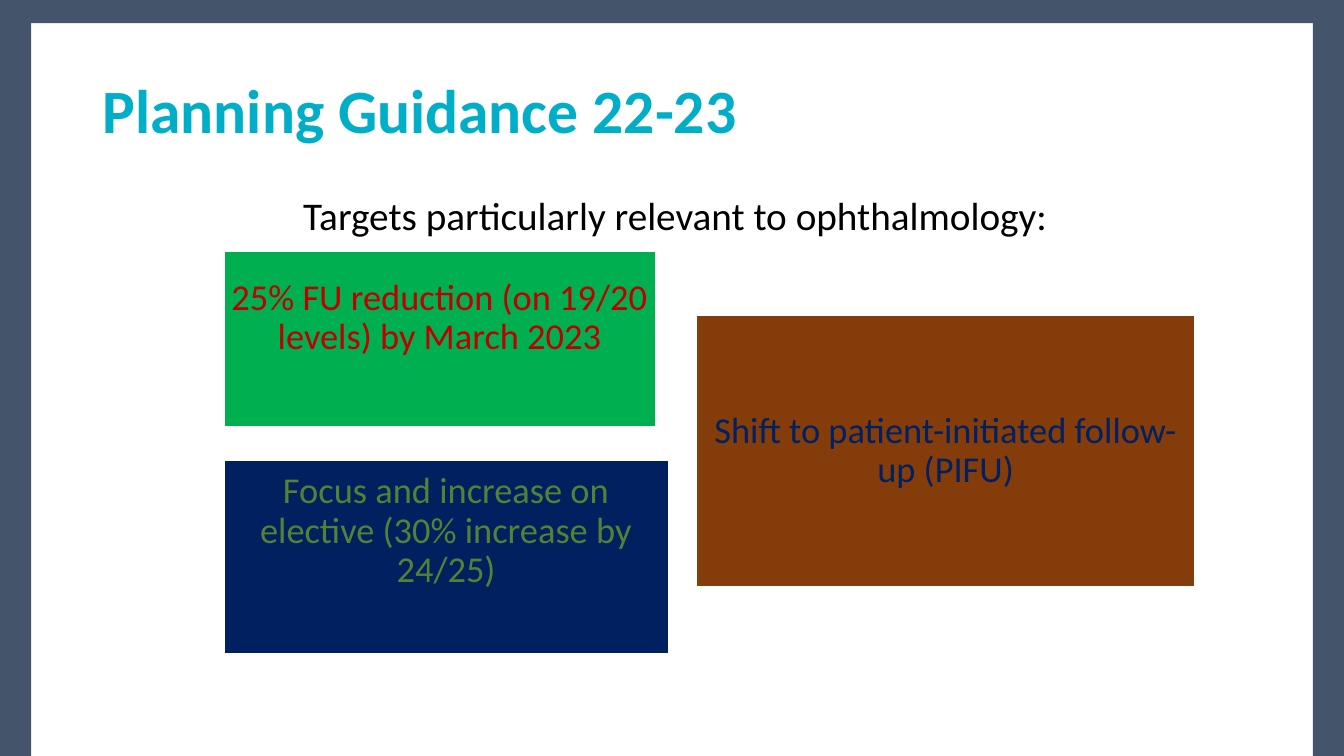
from dataclasses import dataclass

from pptx import Presentation
from pptx.dml.color import RGBColor
from pptx.enum.shapes import MSO_SHAPE
from pptx.enum.text import MSO_ANCHOR, PP_ALIGN
from pptx.util import Inches, Pt

RECT = MSO_SHAPE.RECTANGLE
TOP, MIDDLE = MSO_ANCHOR.TOP, MSO_ANCHOR.MIDDLE
LEFT, CENTER = PP_ALIGN.LEFT, PP_ALIGN.CENTER

FONT = "Calibri"
SLATE = "44546A"
WHITE = "FFFFFF"
SLIDE_W, SLIDE_H = 13.33, 7.5
SIDE_W, TOP_H = 0.31, 0.23
PAD = 0.07


@dataclass
class Box:
    left: float
    top: float
    width: float
    height: float


@dataclass
class Target:
    box: Box
    fill: str
    color: str
    text: str
    bottom: float = PAD


FRAME = [
    Box(0, 0, SIDE_W, SLIDE_H),
    Box(SLIDE_W - SIDE_W, 0, SIDE_W, SLIDE_H),
    Box(0, 0, SLIDE_W, TOP_H),
]

TARGETS = [
    Target(Box(2.22, 2.49, 4.28, 1.74), "00B050", "C00000",
           "25% FU reduction (on 19/20 levels) by March 2023", 0.47),
    Target(Box(6.91, 3.13, 4.94, 2.69), "843C0B", "002060",
           "Shift to patient-initiated follow-up (PIFU)"),
    Target(Box(2.22, 4.57, 4.41, 1.92), "002060", "548235",
           "Focus and increase on elective (30% increase by 24/25)", 0.59),
]


def rgb(value: str) -> RGBColor:
    return RGBColor.from_string(value)


def place(box: Box) -> list:
    return [Inches(v) for v in (box.left, box.top, box.width, box.height)]


def add_rect(slide, box: Box, fill: str):
    sp = slide.shapes.add_shape(RECT, *place(box))
    sp.shadow.inherit = False
    sp.fill.solid()
    sp.fill.fore_color.rgb = rgb(fill)
    sp.line.fill.background()
    return sp


def write(sp, text: str, color: str, frame: dict, para: dict, font: dict) -> None:
    tf = sp.text_frame
    p = tf.paragraphs[0]
    r = p.add_run()
    r.text = text
    r.font.color.rgb = rgb(color)
    formats = (
        (tf, {"word_wrap": True, **frame}),
        (p, para),
        (r.font, {"name": FONT, **font}),
    )
    for target, values in formats:
        for name, value in values.items():
            setattr(target, name, value)


def add_text(slide, box: Box, text: str, color: str,
             frame: dict, para: dict, font: dict) -> None:
    sp = slide.shapes.add_textbox(*place(box))
    write(sp, text, color, frame, para, font)


def add_target(slide, target: Target) -> None:
    sp = add_rect(slide, target.box, target.fill)
    sp.line.color.rgb = rgb(WHITE)
    sp.line.width = Pt(1)
    frame = {f"margin_{side}": Inches(PAD) for side in ("left", "right", "top")}
    frame.update(margin_bottom=Inches(target.bottom), vertical_anchor=MIDDLE)
    write(sp, target.text, target.color, frame,
          {"alignment": CENTER, "line_spacing": 0.9}, {"size": Pt(26)})


def main() -> None:
    prs = Presentation()
    prs.slide_width, prs.slide_height = Inches(SLIDE_W), Inches(SLIDE_H)
    slide = prs.slides.add_slide(prs.slide_layouts[6])
    slide.background.fill.solid()
    slide.background.fill.fore_color.rgb = rgb(WHITE)
    for box in FRAME:
        add_rect(slide, box, SLATE)
    add_text(slide, Box(0.92, 0.4, 11.5, 1.45), "Planning Guidance 22-23", "00AEC7",
             {"vertical_anchor": MIDDLE}, {"alignment": LEFT, "line_spacing": 0.9},
             {"size": Pt(44), "bold": True})
    add_text(slide, Box(1, 1.85, 11.39, 1.28),
             "Targets particularly relevant to ophthalmology:", "000000",
             {"vertical_anchor": TOP}, {"alignment": CENTER}, {"size": Pt(28)})
    for target in TARGETS:
        add_target(slide, target)
    prs.save("out.pptx")


if __name__ == "__main__":
    main()
